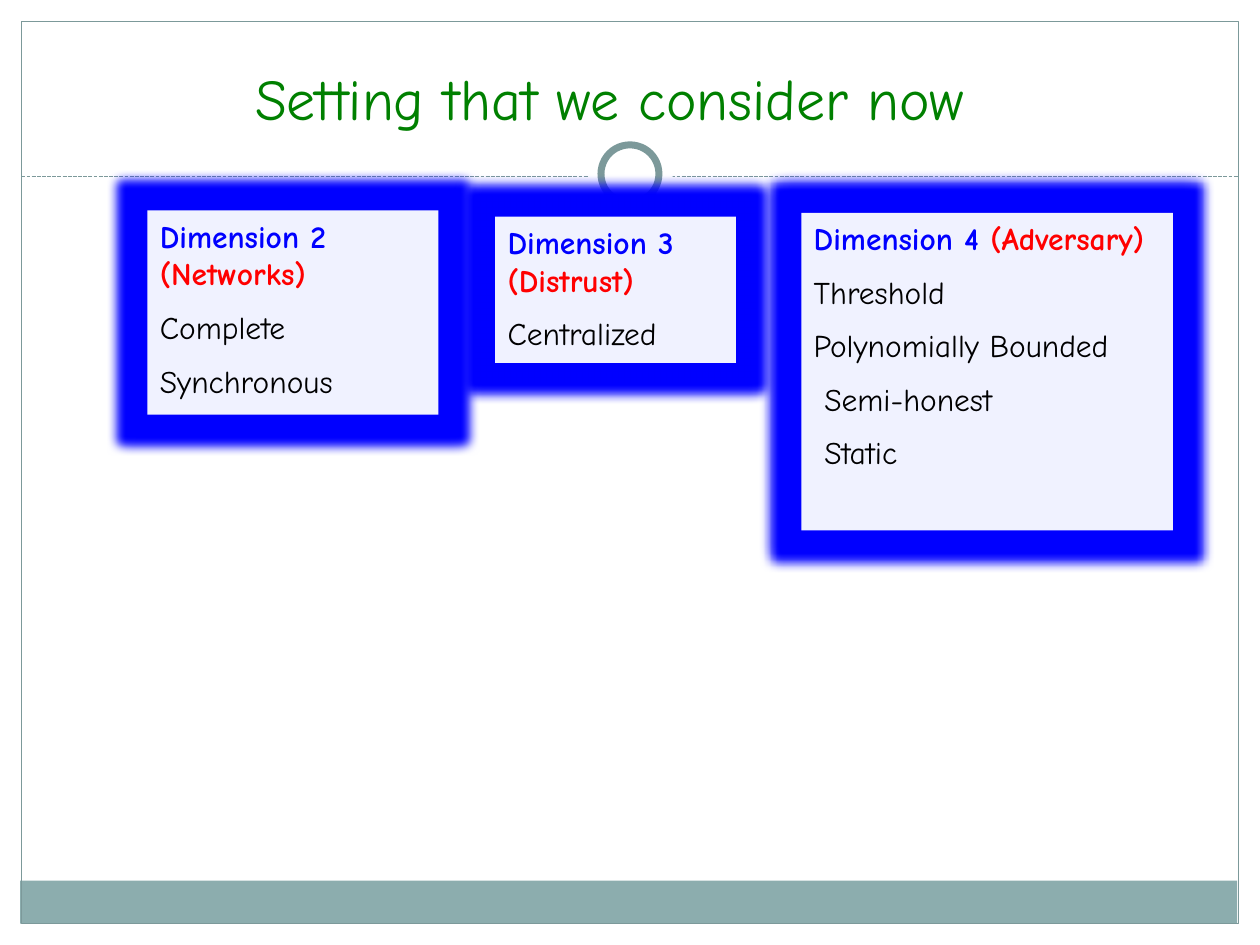
from lxml import etree
from pptx import Presentation
from pptx.dml.color import RGBColor
from pptx.enum.dml import MSO_LINE
from pptx.enum.shapes import MSO_CONNECTOR, MSO_SHAPE
from pptx.enum.text import MSO_ANCHOR, PP_ALIGN
from pptx.oxml.ns import qn
from pptx.util import Inches, Pt

FONT = "Comic Neue"
COLORS = {"white": "FFFFFF", "band": "8CADAE", "frame": "7C999A", "title": "008000",
          "panel": "F0F2FF", "blue": "0000FF", "red": "FF0000", "black": "000000"}
TITLE = "Setting that we consider now"

# (left, top, width, height), heading, topic, items
PANELS = [
    ((1.17, 1.67, 2.31, 1.62), "Dimension 2 ", "(Networks)", ["Complete", "Synchronous"]),
    ((3.93, 1.72, 1.91, 1.16), "Dimension 3 ", "(Distrust)", ["Centralized"]),
    ((6.36, 1.69, 2.95, 2.52), "Dimension 4 ", "(Adversary)",
     ["Threshold", "Polynomially Bounded", " Semi-honest", " Static"]),
]

# shape, (left, top, width, height), fill, line, line width
DECOR = [
    (MSO_SHAPE.RECTANGLE, (0.16, 6.99, 9.66, 0.34), "band", None, 0),
    (MSO_SHAPE.RECTANGLE, (0.17, 0.17, 9.66, 7.16), None, "frame", 0.75),
]
RINGS = [
    (MSO_SHAPE.OVAL, (4.67, 1.05, 0.67, 0.67), "white", None, 0),
    (MSO_SHAPE.OVAL, (4.77, 1.15, 0.46, 0.46), "white", "frame", 4),
]


def rgb(name):
    return RGBColor.from_string(COLORS[name])


def add_box(slide, kind, at, fill, line=None, width=0):
    sp = slide.shapes.add_shape(kind, *map(Inches, at))
    sp.shadow.inherit = False
    if fill:
        sp.fill.solid()
        sp.fill.fore_color.rgb = rgb(fill)
    else:
        sp.fill.background()
    if line:
        sp.line.color.rgb = rgb(line)
        sp.line.width = Pt(width)
    else:
        sp.line.fill.background()
    return sp


def add_run(p, text, color, size=18, bold=False):
    r = p.add_run()
    r.text = text
    for name, value in {"name": FONT, "size": Pt(size), "bold": bold}.items():
        setattr(r.font, name, value)
    r.font.color.rgb = rgb(color)


def add_glow(sp, color, radius):
    effects = sp._element.spPr.find(qn("a:effectLst"))
    glow = etree.SubElement(effects, qn("a:glow"), rad=str(Pt(radius)))
    etree.SubElement(glow, qn("a:srgbClr"), val=COLORS[color])


def space_before(p, percent):
    spacing = etree.SubElement(p._p.get_or_add_pPr(), qn("a:spcBef"))
    etree.SubElement(spacing, qn("a:spcPct"), val=str(percent * 1000))


def add_panel(slide, at, heading, topic, items):
    sp = add_box(slide, MSO_SHAPE.RECTANGLE, at, "panel")
    add_glow(sp, "blue", 12)
    tf = sp.text_frame
    tf.word_wrap = True
    tf.vertical_anchor = MSO_ANCHOR.TOP
    lines = [[(heading, "blue", 18, True), (topic, "red", 18, True)]]
    lines += [[(item, "black")] for item in items]
    for i, runs in enumerate(lines):
        p = tf.add_paragraph() if i else tf.paragraphs[0]
        p.alignment = PP_ALIGN.LEFT
        space_before(p, 50)
        for run in runs:
            add_run(p, *run)


def main():
    prs = Presentation()
    prs.slide_width, prs.slide_height = Inches(10), Inches(7.5)
    slide = prs.slides.add_slide(prs.slide_layouts[6])

    # Frame, footer band, divider and ring
    for part in DECOR:
        add_box(slide, *part)
    divider = slide.shapes.add_connector(
        MSO_CONNECTOR.STRAIGHT, *map(Inches, (0.17, 1.4, 9.83, 1.4)))
    divider.line.color.rgb = rgb("frame")
    divider.line.width = Pt(0.75)
    divider.line.dash_style = MSO_LINE.SQUARE_DOT
    etree.SubElement(divider._element.spPr, qn("a:effectLst"))
    for part in RINGS:
        add_box(slide, *part)

    # Title, set slightly left of centre by a wider right margin
    tf = slide.shapes.add_textbox(*map(Inches, (0.69, 0.18, 8.62, 0.92))).text_frame
    tf.word_wrap = True
    tf.vertical_anchor = MSO_ANCHOR.BOTTOM
    tf.margin_right = Inches(0.42)
    tf.paragraphs[0].alignment = PP_ALIGN.CENTER
    add_run(tf.paragraphs[0], TITLE, "title", 33)

    # Dimension panels
    for panel in PANELS:
        add_panel(slide, *panel)

    prs.save("out.pptx")


if __name__ == "__main__":
    main()
